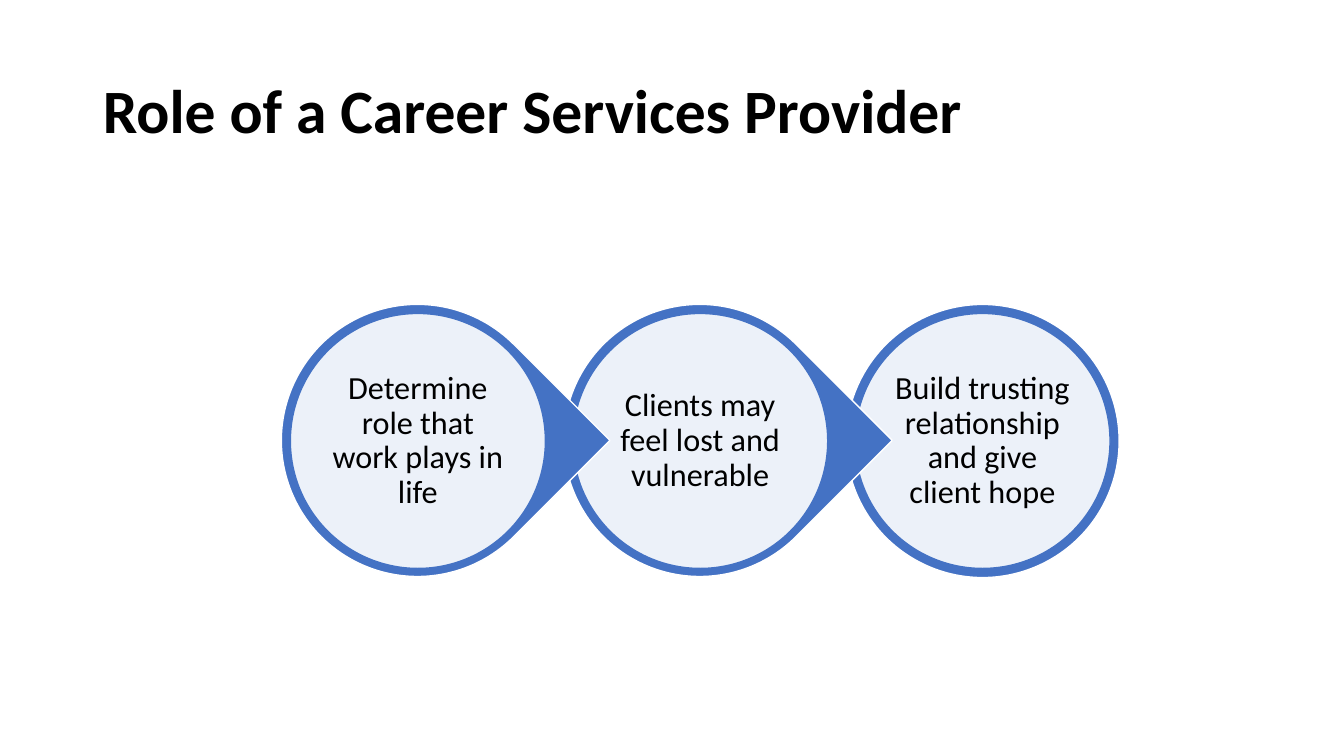
from dataclasses import dataclass

from lxml import etree
from pptx import Presentation
from pptx.dml.color import RGBColor
from pptx.enum import shapes, text
from pptx.oxml import ns
from pptx.util import Inches, Pt

BLACK = RGBColor(0x00, 0x00, 0x00)
WHITE = RGBColor(0xFF, 0xFF, 0xFF)
BLUE = RGBColor(0x44, 0x72, 0xC4)
FONT_NAME = "Calibri"

FIRST_LEFT = 2.79
STEP_PITCH = 2.8
STEP_TOP = 3.02
DISC_INSET = 0.09
DISC_SIZE = 2.53
LABEL_INSET = 0.45
LABEL_SIZE = 1.81


@dataclass(frozen=True)
class Step:
    label: str
    outline: shapes.MSO_SHAPE = shapes.MSO_SHAPE.TEAR
    size: float = 2.7
    rotation: float = 45


STEPS = [
    Step("Determine role that work plays in life"),
    Step("Clients may feel lost and vulnerable"),
    Step(
        "Build trusting relationship and give client hope",
        outline=shapes.MSO_SHAPE.OVAL,
        size=2.71,
        rotation=0,
    ),
]


def write_text(frame, content: str, *, size: float, align, bold: bool = False) -> None:
    frame.word_wrap = True
    frame.auto_size = text.MSO_AUTO_SIZE.NONE
    frame.vertical_anchor = text.MSO_ANCHOR.MIDDLE
    paragraph = frame.paragraphs[0]
    paragraph.alignment = align
    paragraph.line_spacing = 0.9
    run = paragraph.add_run()
    run.text = content
    run.font.name = FONT_NAME
    run.font.size = Pt(size)
    run.font.bold = bold
    run.font.color.rgb = BLACK


def add_filled_shape(slide, kind, left: float, top: float, size: float,
                     fill: RGBColor, line: RGBColor):
    shape = slide.shapes.add_shape(
        kind, Inches(left), Inches(top), Inches(size), Inches(size)
    )
    shape.shadow.inherit = False
    shape.fill.solid()
    shape.fill.fore_color.rgb = fill
    shape.line.color.rgb = line
    shape.line.width = Pt(1)
    return shape


def set_opacity(shape, percent: int) -> None:
    color = shape.fill._xPr.find(ns.qn("a:solidFill"))[0]
    etree.SubElement(color, ns.qn("a:alpha"), val=str(percent * 1000))


def add_step(slide, step: Step, left: float) -> None:
    outline = add_filled_shape(
        slide, step.outline, left, STEP_TOP, step.size, BLUE, WHITE
    )
    outline.rotation = step.rotation

    disc = add_filled_shape(
        slide, shapes.MSO_SHAPE.OVAL, left + DISC_INSET, STEP_TOP + DISC_INSET,
        DISC_SIZE, WHITE, BLUE
    )
    set_opacity(disc, 90)

    label = slide.shapes.add_textbox(
        Inches(left + LABEL_INSET), Inches(STEP_TOP + LABEL_INSET),
        Inches(LABEL_SIZE), Inches(LABEL_SIZE)
    )
    frame = label.text_frame
    frame.margin_left = frame.margin_right = Inches(0.03)
    frame.margin_top = frame.margin_bottom = Inches(0.03)
    write_text(frame, step.label, size=23, align=text.PP_ALIGN.CENTER)


def main() -> None:
    presentation = Presentation()
    presentation.slide_width = Inches(13.33)
    presentation.slide_height = Inches(7.5)
    slide = presentation.slides.add_slide(presentation.slide_layouts[5])

    title = slide.shapes.title
    title.left, title.top = Inches(0.92), Inches(0.4)
    title.width, title.height = Inches(11.5), Inches(1.45)
    write_text(
        title.text_frame, "Role of a Career Services Provider",
        size=44, align=text.PP_ALIGN.LEFT, bold=True
    )

    for index, step in reversed(list(enumerate(STEPS))):
        add_step(slide, step, FIRST_LEFT + index * STEP_PITCH)

    presentation.save("out.pptx")


if __name__ == "__main__":
    main()
